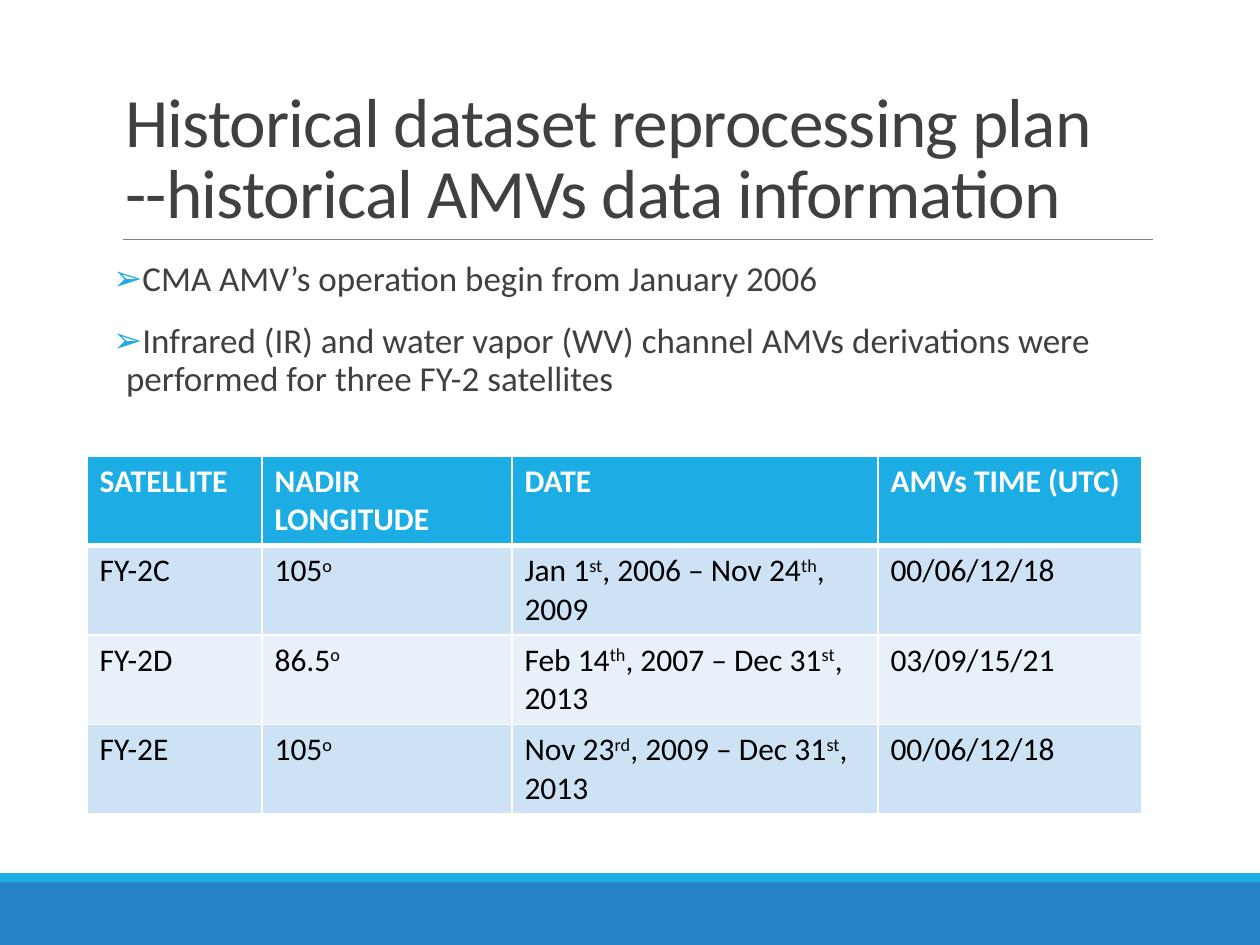
from dataclasses import dataclass

from lxml.etree import SubElement
from pptx import Presentation
from pptx.dml.color import RGBColor
from pptx.enum.shapes import MSO_CONNECTOR, MSO_SHAPE
from pptx.enum.text import MSO_ANCHOR, MSO_AUTO_SIZE, PP_ALIGN
from pptx.oxml.ns import qn
from pptx.util import Emu, Pt


@dataclass(frozen=True)
class Theme:
    font: str = "Calibri"
    text: str = "404040"
    cell_text: str = "000000"
    white: str = "FFFFFF"
    accent: str = "1CADE4"
    footer: str = "2683C6"
    rule: str = "808080"
    odd_row: str = "CDE3F5"
    even_row: str = "E8F1FA"
    title_size: float = 39.6
    body_size: int = 20
    table_size: int = 18


def px(length):
    return Emu(round(length * 914400 / 126))


def write(paragraph, text, size, color, bold=False, spacing=0):
    paragraph.alignment = PP_ALIGN.LEFT
    for line_number, line in enumerate(text.split("\n")):
        if line_number:
            paragraph.add_line_break()
        for part_number, part in enumerate(line.split("^")):
            if not part:
                continue
            run = paragraph.add_run()
            run.text = part
            run.font.name = theme.font
            run.font.size = Pt(size)
            run.font.bold = bold
            run.font.color.rgb = RGBColor.from_string(color)
            properties = run.font._element
            if spacing:
                properties.set("spc", str(spacing))
            if part_number % 2:
                properties.set("baseline", "30000")


theme = Theme()
presentation = Presentation()
presentation.slide_width = px(1260)
presentation.slide_height = px(945)
slide = presentation.slides.add_slide(presentation.slide_layouts[1])

for top, height, color in [(882, 63, theme.footer), (873, 9, theme.accent)]:
    band = slide.shapes.add_shape(MSO_SHAPE.RECTANGLE, 0, px(top), px(1260), px(height))
    band.shadow.inherit = False
    band.fill.solid()
    band.fill.fore_color.rgb = RGBColor.from_string(color)
    band.line.fill.background()

rule = slide.shapes.add_connector(MSO_CONNECTOR.STRAIGHT, px(123), px(239), px(1153), px(239))
rule.line.color.rgb = RGBColor.from_string(theme.rule)
rule.line.width = Pt(0.5)
SubElement(rule._element.spPr, qn("a:effectLst"))

title = slide.shapes.title
title.left, title.top, title.width, title.height = px(113), px(39), px(1040), px(200)
title.text_frame.vertical_anchor = MSO_ANCHOR.BOTTOM
title.text_frame.auto_size = MSO_AUTO_SIZE.NONE
title.text_frame.word_wrap = True
title_paragraph = title.text_frame.paragraphs[0]
title_paragraph.line_spacing = 0.85
write(
    title_paragraph,
    "Historical dataset reprocessing plan\n--historical AMVs data information",
    size=theme.title_size,
    color=theme.text,
    spacing=-50,
)

body = slide.placeholders[1]
body.left, body.top, body.width, body.height = px(113), px(255), px(1040), px(554)
body_frame = body.text_frame
body_frame.auto_size = MSO_AUTO_SIZE.NONE
body_frame.word_wrap = True
body_frame.vertical_anchor = MSO_ANCHOR.TOP
body_frame.margin_left = body_frame.margin_right = 0
bullets = [
    "CMA AMV’s operation begin from January 2006",
    "Infrared (IR) and water vapor (WV) channel AMVs derivations were performed for three FY-2 satellites",
]
for number, text in enumerate(bullets):
    paragraph = body_frame.add_paragraph() if number else body_frame.paragraphs[0]
    paragraph.line_spacing = 0.9
    paragraph.space_before = Pt(12)
    paragraph.space_after = Pt(2)
    write(paragraph, text, size=theme.body_size, color=theme.text)
    properties = paragraph._p.get_or_add_pPr()
    properties.set("marL", str(px(13)))
    properties.set("indent", str(-px(13)))
    bullet_color = SubElement(properties, qn("a:buClr"))
    SubElement(bullet_color, qn("a:srgbClr"), val=theme.accent)
    SubElement(properties, qn("a:buChar"), char="➢")

rows = [
    ["SATELLITE", "NADIR LONGITUDE", "DATE", "AMVs TIME (UTC)"],
    ["FY-2C", "105^o^", "Jan 1^st^, 2006 – Nov 24^th^, 2009", "00/06/12/18"],
    ["FY-2D", "86.5^o^", "Feb 14^th^, 2007 – Dec 31^st^, 2013", "03/09/15/21"],
    ["FY-2E", "105^o^", "Nov 23^rd^, 2009 – Dec 31^st^, 2013", "00/06/12/18"],
]
column_widths = [175, 250, 366, 264]
row_height = 89
table = slide.shapes.add_table(
    len(rows), len(column_widths), px(87), px(456), px(sum(column_widths)), px(row_height * len(rows))
).table
for column, width in zip(table.columns, column_widths):
    column.width = px(width)

for row_number, row in enumerate(rows):
    is_header = row_number == 0
    row_fill = theme.accent if is_header else theme.odd_row if row_number % 2 else theme.even_row
    for column_number, text in enumerate(row):
        cell = table.cell(row_number, column_number)
        write(
            cell.text_frame.paragraphs[0],
            text,
            size=theme.table_size,
            color=theme.white if is_header else theme.cell_text,
            bold=is_header,
        )
        border_widths = {
            "lnL": 1,
            "lnR": 1,
            "lnT": 3 if row_number == 1 else 1,
            "lnB": 3 if is_header else 1,
        }
        properties = cell._tc.get_or_add_tcPr()
        for side, width in border_widths.items():
            border = SubElement(properties, qn(f"a:{side}"), w=str(Pt(width)))
            border_fill = SubElement(border, qn("a:solidFill"))
            SubElement(border_fill, qn("a:srgbClr"), val=theme.white)
        cell.fill.solid()
        cell.fill.fore_color.rgb = RGBColor.from_string(row_fill)

presentation.save("out.pptx")
